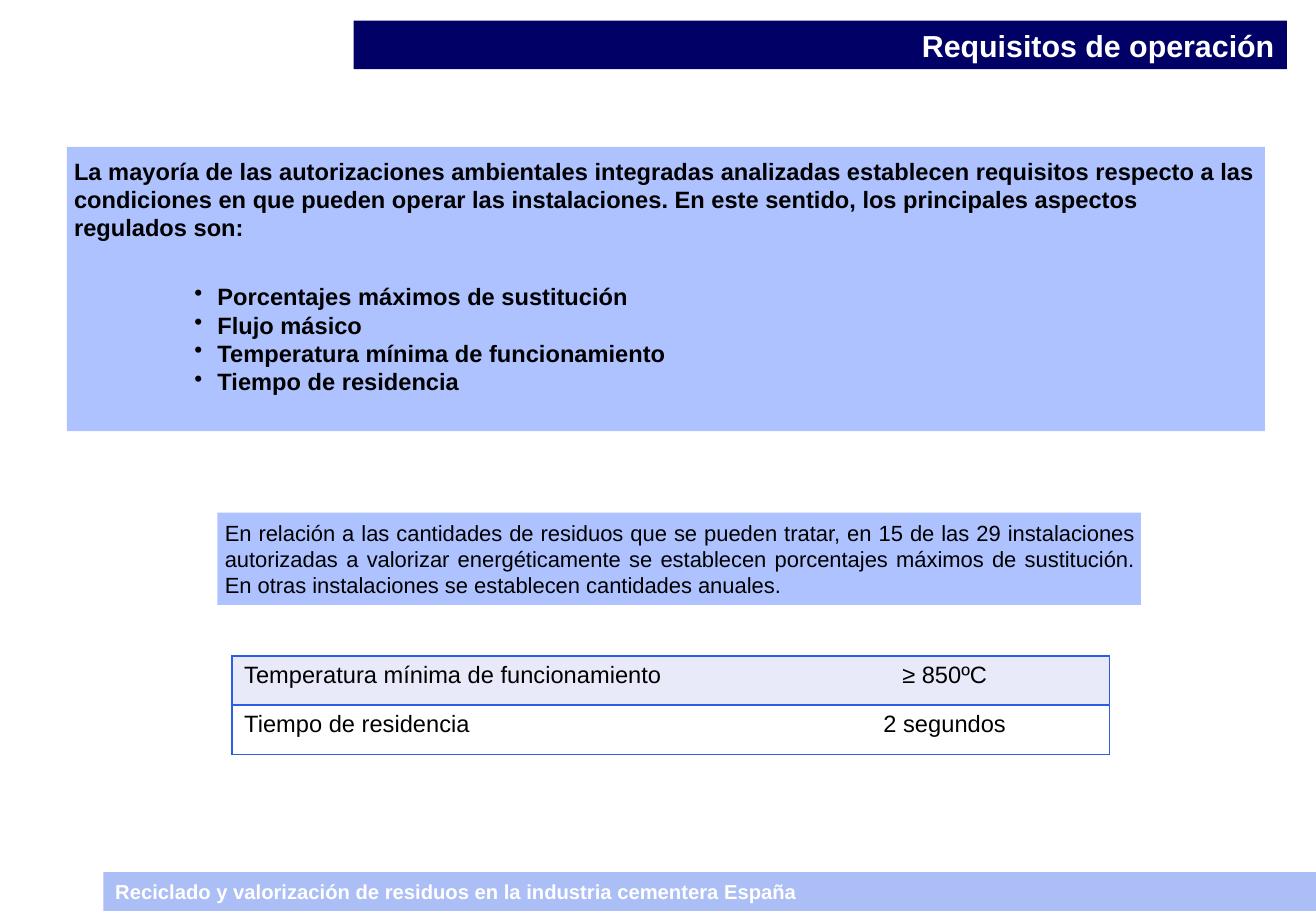
from dataclasses import dataclass

from pptx import Presentation
from pptx.dml.color import RGBColor
from pptx.enum import shapes, text
from pptx.oxml.ns import qn
from pptx.util import Inches, Pt
from lxml import etree

NAVY, PALE, FOOTER_BLUE, EDGE = "000066", "ADC2FF", "ABBEF5", "2D5CE7"
BLACK, WHITE, LILAC = "000000", "FFFFFF", "E8EAFA"
ALIGN, ANCHOR = text.PP_ALIGN, text.MSO_ANCHOR


@dataclass
class Panel:
    left: float
    top: float
    width: float
    height: float
    fill: str
    margin_x: float = 0.1
    margin_top: float = 0.05
    anchor: ANCHOR = ANCHOR.MIDDLE


@dataclass
class Requirement:
    name: str
    value: str
    fill: str


TITLE = Panel(2.91, 0.17, 7.68, 0.4, NAVY)
FOOTER = Panel(0.85, 7.18, 9.98, 0.32, FOOTER_BLUE)
ASPECTS = Panel(0.55, 1.21, 9.86, 2.34, PALE, 0.06, 0.08, ANCHOR.TOP)
QUANTITIES = Panel(1.79, 4.22, 7.6, 0.76, PALE, 0.06)

ASPECT_NAMES = [
    "Porcentajes máximos de sustitución",
    "Flujo másico",
    "Temperatura mínima de funcionamiento",
    "Tiempo de residencia",
]
REQUIREMENTS = [
    Requirement("Temperatura mínima de funcionamiento", "≥ 850ºC", LILAC),
    Requirement("Tiempo de residencia", "2 segundos", WHITE),
]


def rgb(value: str) -> RGBColor:
    return RGBColor.from_string(value)


def write(tf, content: str, *, size: float = 14, color: str = BLACK,
          bold: bool = False, align=ALIGN.LEFT, before: float = 0,
          bullet: bool = False) -> None:
    """Fill the empty first paragraph of a frame, or add another one."""
    p = tf.paragraphs[0] if not tf.text else tf.add_paragraph()
    if bullet:
        pPr = p._p.get_or_add_pPr()
        pPr.set("marL", str(Inches(1.18)))
        pPr.set("indent", str(Inches(-0.19)))
        etree.SubElement(pPr, qn("a:buChar")).set("char", "•")
    p.alignment = align
    p.space_before = Pt(before)
    r = p.add_run()
    r.text = content
    r.font.name = "Arial"
    r.font.size = Pt(size)
    r.font.bold = bold
    r.font.color.rgb = rgb(color)


def format_panel(sp, panel: Panel):
    """Place and fill a shape, and return its text frame."""
    sp.left, sp.top = Inches(panel.left), Inches(panel.top)
    sp.width, sp.height = Inches(panel.width), Inches(panel.height)
    sp.fill.solid()
    sp.fill.fore_color.rgb = rgb(panel.fill)
    sp.line.fill.background()
    tf = sp.text_frame
    tf.word_wrap = True
    tf.auto_size = text.MSO_AUTO_SIZE.NONE
    tf.vertical_anchor = panel.anchor
    tf.margin_left = tf.margin_right = Inches(panel.margin_x)
    tf.margin_top, tf.margin_bottom = Inches(panel.margin_top), Inches(0.05)
    return tf


def add_panel(s, panel: Panel):
    sp = s.shapes.add_shape(shapes.MSO_SHAPE.RECTANGLE, 0, 0, 0, 0)
    sp.shadow.inherit = False
    return format_panel(sp, panel)


def set_borders(cell, visible: str) -> None:
    """Draw the sides named in visible (of L, R, T, B) and hide the others."""
    tcPr = cell._tc.get_or_add_tcPr()
    for side in "LRTB":
        ln = etree.SubElement(tcPr, qn(f"a:ln{side}"), w=str(Pt(1)))
        if side in visible:
            fill = etree.SubElement(ln, qn("a:solidFill"))
            etree.SubElement(fill, qn("a:srgbClr"), val=EDGE)
        else:
            etree.SubElement(ln, qn("a:noFill"))


def add_requirements(s) -> None:
    table = s.shapes.add_table(len(REQUIREMENTS), 2, Inches(1.91), Inches(5.4),
                               Inches(7.22), Inches(0.81)).table
    table.first_row = table.horz_banding = False
    table.columns[0].width, table.columns[1].width = Inches(4.51), Inches(2.71)
    for i, requirement in enumerate(REQUIREMENTS):
        columns = [(requirement.name, ALIGN.LEFT, "LTB"),
                   (requirement.value, ALIGN.CENTER, "RTB")]
        for j, (content, align, sides) in enumerate(columns):
            cell = table.cell(i, j)
            set_borders(cell, sides)
            cell.fill.solid()
            cell.fill.fore_color.rgb = rgb(requirement.fill)
            write(cell.text_frame, content, align=align)


def main() -> None:
    prs = Presentation()
    prs.slide_width, prs.slide_height = Inches(10.83), Inches(7.5)
    s = prs.slides.add_slide(prs.slide_layouts.get_by_name("Title Only"))

    write(format_panel(s.shapes.title, TITLE), "Requisitos de operación",
          size=18, color=WHITE, bold=True, align=ALIGN.RIGHT)
    write(add_panel(s, FOOTER),
          "Reciclado y valorización de residuos en la industria cementera España",
          size=12, color=WHITE, bold=True)

    tf = add_panel(s, ASPECTS)
    write(tf, "La mayoría de las autorizaciones ambientales integradas analizadas "
          "establecen requisitos respecto a las condiciones en que pueden operar "
          "las instalaciones. En este sentido, los principales aspectos regulados "
          "son:", bold=True)
    for i, name in enumerate(ASPECT_NAMES):
        write(tf, name, bold=True, bullet=True, before=0 if i else 24)

    add_requirements(s)
    write(add_panel(s, QUANTITIES),
          "En relación a las cantidades de residuos que se pueden tratar, en 15 de "
          "las 29 instalaciones autorizadas a valorizar energéticamente se "
          "establecen porcentajes máximos de sustitución. En otras instalaciones "
          "se establecen cantidades anuales.", size=13, align=ALIGN.JUSTIFY)
    prs.save("out.pptx")


if __name__ == "__main__":
    main()
